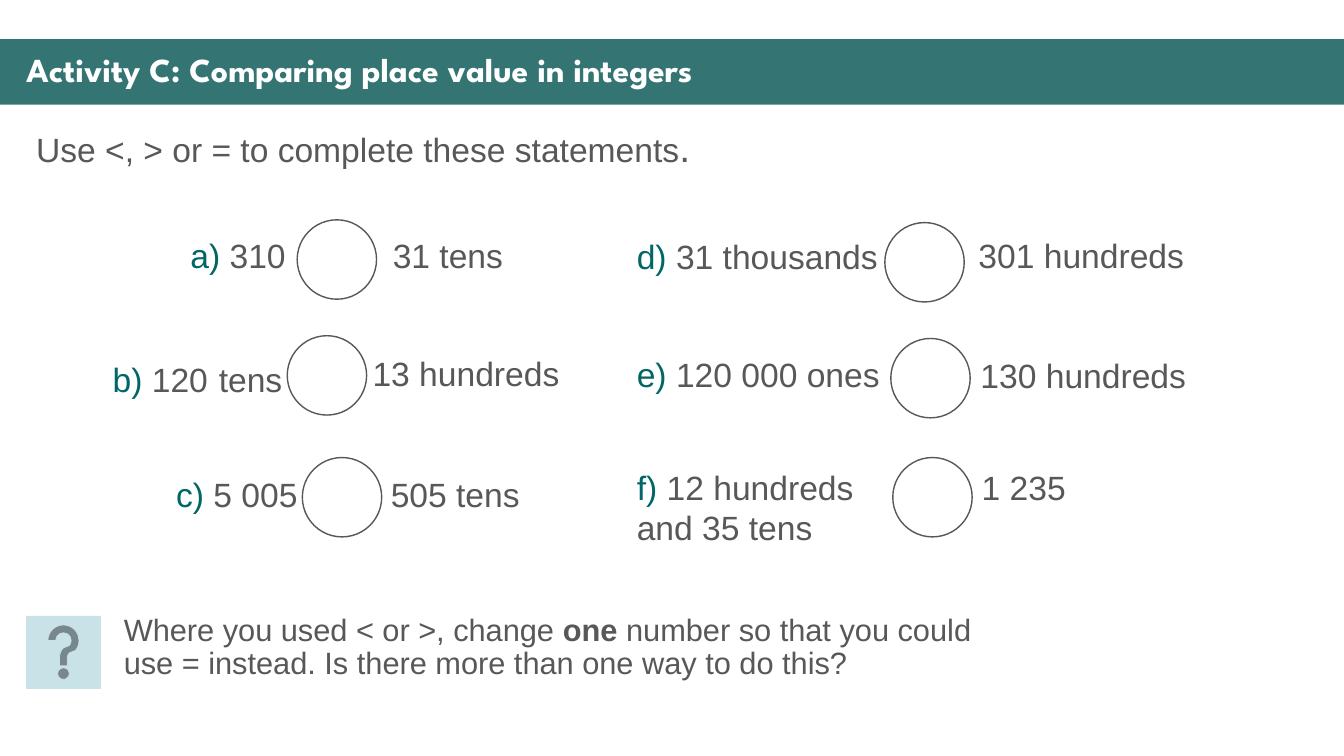
from pptx import Presentation
from pptx import util as u
from pptx.dml.color import RGBColor
from pptx.enum import shapes, text

TEAL = RGBColor(0x34, 0x75, 0x74)
LABEL = RGBColor(0x00, 0x66, 0x66)
GREY = RGBColor(0x58, 0x58, 0x58)
WHITE = RGBColor(0xFF, 0xFF, 0xFF)
PALE_BLUE = RGBColor(0xC8, 0xE2, 0xE8)
CIRCLE_SIZE = 2
LINE_HEIGHT = 1.27

STATEMENTS = [
    ("a) ", [("310", {})], (4.55, 5.79, 2.95), False,
     (7.49, 5.54), "31 tens", (9.65, 5.79, 3.33)),
    ("b) ", [("120", {}), (" ", {"size": 28}), ("tens", {})], (2.59, 8.79, 4.83), False,
     (7.24, 8.46), "13 hundreds", (9.14, 8.76, 5.28)),
    ("c) ", [("5 005", {})], (4.19, 11.81, 3.61), False,
     (7.62, 11.53), "505 tens", (9.6, 11.81, 3.81)),
    ("d) ", [("31 thousands", {})], (15.8, 5.82, 6.65), True,
     (22.3, 5.61), "301 hundreds", (24.41, 5.79, 5.74)),
    ("e) ", [("120 000 ones", {})], (15.8, 8.79, 6.96), True,
     (22.45, 8.53), "130 hundreds", (24.46, 8.81, 5.99)),
    ("f) ", [("12 hundreds and 35 tens", {})], (15.8, 11.63, 6.53), True,
     (22.5, 11.53), "1 235", (24.49, 11.63, 2.67)),
]


def add_run(paragraph, content, size=24, color=GREY, font="Arial", bold=False):
    run = paragraph.add_run()
    run.text = content
    run.font.size = u.Pt(size)
    run.font.color.rgb = color
    run.font.name = font
    run.font.bold = bold


class Worksheet:
    def __init__(self, presentation):
        self.slide = presentation.slides.add_slide(presentation.slide_layouts[5])

    def title(self, content, left, top, width, height):
        shape = self.slide.shapes.title
        shape.left, shape.top = u.Cm(left), u.Cm(top)
        shape.width, shape.height = u.Cm(width), u.Cm(height)
        frame = shape.text_frame
        frame.vertical_anchor = text.MSO_ANCHOR.MIDDLE
        frame.auto_size = text.MSO_AUTO_SIZE.NONE
        paragraph = frame.paragraphs[0]
        paragraph.alignment = text.PP_ALIGN.LEFT
        paragraph.line_spacing = 0.9
        add_run(paragraph, content, color=WHITE, font="League Spartan", bold=True)

    def shape(self, kind, left, top, width, height, fill=None, line=None, line_width=1):
        shape = self.slide.shapes.add_shape(
            kind, u.Cm(left), u.Cm(top), u.Cm(width), u.Cm(height))
        shape.shadow.inherit = False
        if fill is None:
            shape.fill.background()
        else:
            shape.fill.solid()
            shape.fill.fore_color.rgb = fill
        if line is None:
            shape.line.fill.background()
        else:
            shape.line.color.rgb = line
            shape.line.width = u.Pt(line_width)
        return shape

    def band(self, *box):
        band = self.shape(shapes.MSO_SHAPE.RECTANGLE, *box, fill=TEAL)
        self.slide.shapes.title._element.addprevious(band._element)

    def text(self, runs, left, top, width, height=LINE_HEIGHT, wrap=True, spacing=None):
        box = self.slide.shapes.add_textbox(
            u.Cm(left), u.Cm(top), u.Cm(width), u.Cm(height))
        frame = box.text_frame
        frame.word_wrap = wrap
        paragraph = frame.paragraphs[0]
        paragraph.line_spacing = spacing
        for content, style in runs:
            add_run(paragraph, content, **style)
        if spacing is None:
            frame.auto_size = text.MSO_AUTO_SIZE.SHAPE_TO_FIT_TEXT

    def statement(self, label, left_runs, left_box, wrap, circle, right, right_box):
        self.shape(shapes.MSO_SHAPE.OVAL, *circle, CIRCLE_SIZE, CIRCLE_SIZE, line=GREY)
        self.text([(label, {"color": LABEL})] + left_runs, *left_box, wrap=wrap)
        self.text([(right, {})], *right_box, wrap=False)


def main():
    presentation = Presentation()
    presentation.slide_width = u.Cm(33.87)
    presentation.slide_height = u.Cm(19.05)
    worksheet = Worksheet(presentation)
    worksheet.band(0, 0.99, 33.87, 1.65)
    worksheet.title("Activity C: Comparing place value in integers", 0.41, 1.22, 33.12, 1.19)
    worksheet.text([("Use <, > or = to complete these statements", {}), (".", {"size": 28})],
                   0.66, 3.12, 32.54, 12.4, spacing=0.9)
    for statement in STATEMENTS:
        worksheet.statement(*statement)
    worksheet.text([
        ("Where you used < or >, change ", {"size": 22}),
        ("one", {"size": 22, "bold": True}),
        (" number so that you could use = instead. Is there more than one way to do this?",
         {"size": 22}),
    ], 2.87, 15.37, 22.28, 3.1, spacing=0.9)
    worksheet.shape(shapes.MSO_SHAPE.ACTION_BUTTON_HELP, 0.66, 15.52, 1.88, 1.83,
                    fill=PALE_BLUE, line=PALE_BLUE, line_width=0.5)
    presentation.save("out.pptx")


if __name__ == "__main__":
    main()
